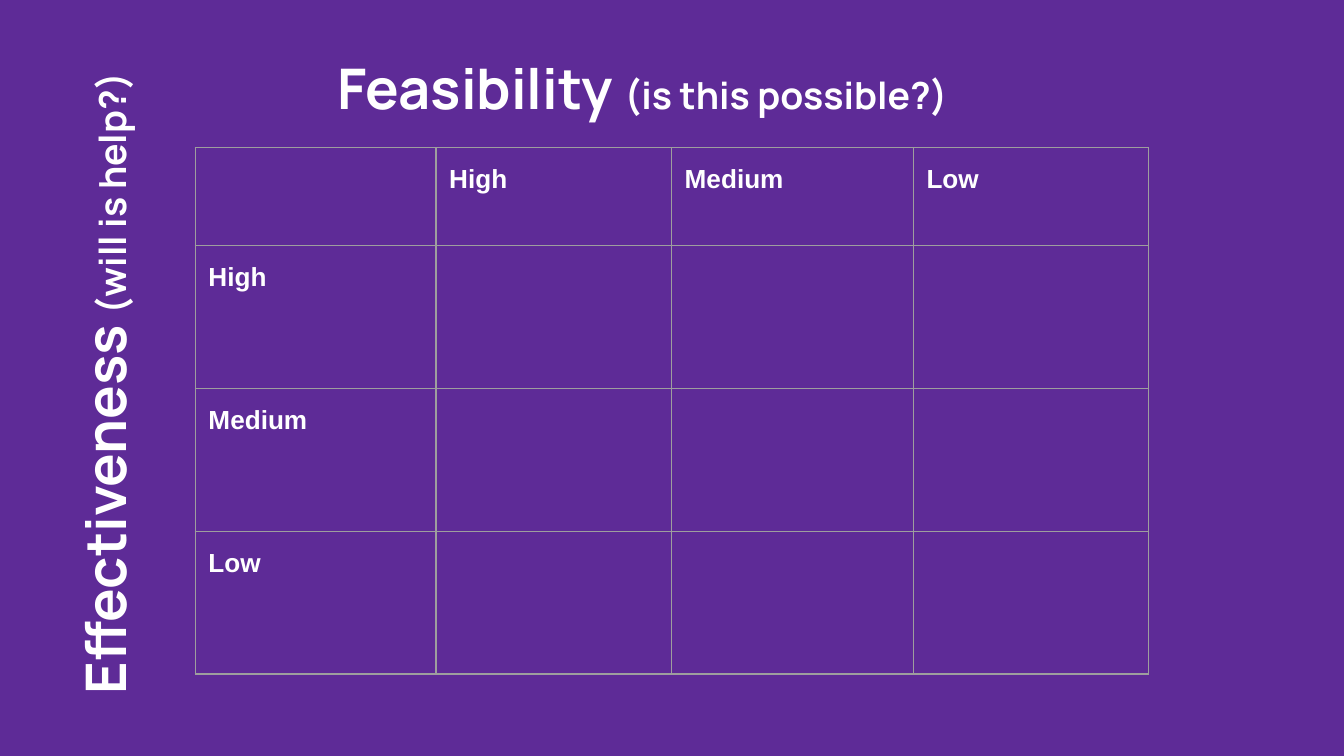
import lxml.etree
import pptx
import pptx.dml.color
import pptx.enum.text
import pptx.oxml.ns
import pptx.util

Cm = pptx.util.Cm
Pt = pptx.util.Pt
RGBColor = pptx.dml.color.RGBColor

PURPLE = RGBColor(0x5E, 0x2B, 0x97)
WHITE = RGBColor(0xFF, 0xFF, 0xFF)
GREY = RGBColor(0x9E, 0x9E, 0x9E)

INSET = Cm(0.25)
LEVELS = ["High", "Medium", "Low"]
COLUMN_WIDTHS = [4.55, 4.45, 4.57, 4.45]
ROW_HEIGHTS = [1.85, 2.7, 2.7, 2.7]


def add_text(paragraph, text, *, size, font="Manrope", color=WHITE, bold=True):
    run = paragraph.add_run()
    run.text = text
    run.font.size = Pt(size)
    run.font.name = font
    run.font.bold = bold
    run.font.color.rgb = color


def set_margins(target):
    target.margin_left = target.margin_right = INSET
    target.margin_top = target.margin_bottom = INSET


def add_axis_title(slide, box, title, question, rotation=0):
    """Box is left, top, width and height in centimetres, before rotation."""
    shape = slide.shapes.add_textbox(*map(Cm, box))
    shape.rotation = rotation
    frame = shape.text_frame
    frame.word_wrap = True
    frame.vertical_anchor = pptx.enum.text.MSO_ANCHOR.TOP
    set_margins(frame)
    paragraph = frame.paragraphs[0]
    add_text(paragraph, title + " ", size=30)
    add_text(paragraph, question, size=20)


def set_borders(cell, color, width):
    properties = cell._tc.get_or_add_tcPr()
    for side in ("a:lnL", "a:lnR", "a:lnT", "a:lnB"):
        line = lxml.etree.SubElement(
            properties, pptx.oxml.ns.qn(side), w=str(Pt(width)))
        fill = lxml.etree.SubElement(line, pptx.oxml.ns.qn("a:solidFill"))
        lxml.etree.SubElement(
            fill, pptx.oxml.ns.qn("a:srgbClr"), val=str(color))


def add_matrix(slide, left, top):
    """Draw the grid with the levels along its first row and column."""
    table = slide.shapes.add_table(
        len(ROW_HEIGHTS), len(COLUMN_WIDTHS), Cm(left), Cm(top),
        Cm(sum(COLUMN_WIDTHS)), Cm(sum(ROW_HEIGHTS))).table
    table.first_row = False
    table.horz_banding = False
    for column, width in zip(table.columns, COLUMN_WIDTHS):
        column.width = Cm(width)
    for row, height in zip(table.rows, ROW_HEIGHTS):
        row.height = Cm(height)
    for cell in table.iter_cells():
        set_margins(cell)
        set_borders(cell, GREY, 0.75)
        cell.fill.background()
    for index, level in enumerate(LEVELS, start=1):
        for cell in (table.cell(0, index), table.cell(index, 0)):
            paragraph = cell.text_frame.paragraphs[0]
            paragraph.line_spacing = 1.15
            add_text(paragraph, level, size=14, font="Arial")


def main():
    presentation = pptx.Presentation()
    presentation.slide_width = Cm(25.4)
    presentation.slide_height = Cm(14.29)
    slide = presentation.slides.add_slide(presentation.slide_layouts[6])
    slide.background.fill.solid()
    slide.background.fill.fore_color.rgb = PURPLE

    add_matrix(slide, 3.69, 2.79)
    add_axis_title(slide, (6.12, 0.76, 13.16, 1.83),
                   "Feasibility", "(is this possible?)")
    add_axis_title(slide, (-4.27, 5.69, 13.03, 2.34),
                   "Effectiveness", "(will is help?)", rotation=270)
    presentation.save("out.pptx")


if __name__ == "__main__":
    main()
